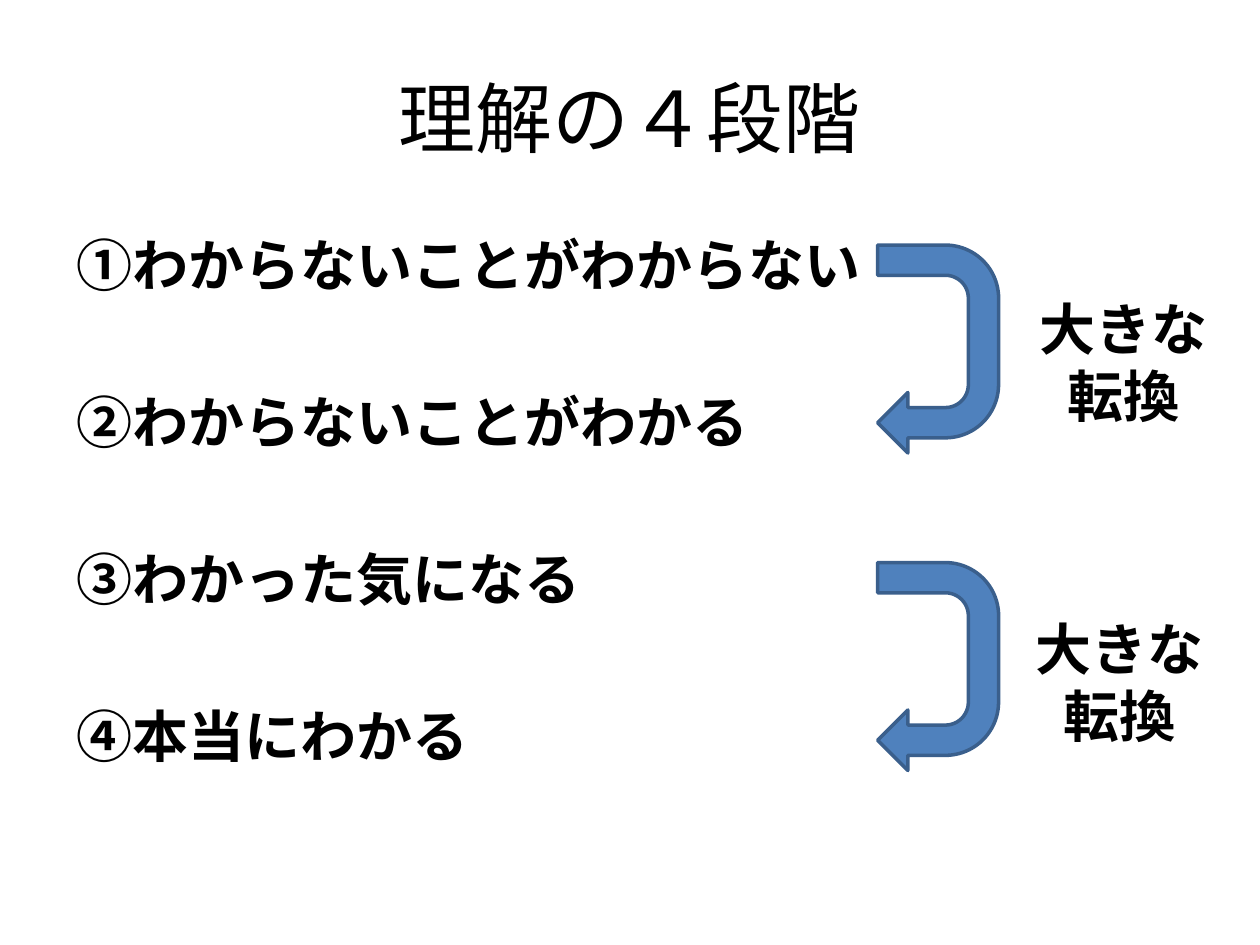
from pptx import Presentation
from pptx.dml.color import RGBColor
from pptx.enum.shapes import MSO_SHAPE
from pptx.enum.text import MSO_ANCHOR, PP_ALIGN
from pptx.util import Inches, Pt

HUES = {"ink": "000000", "fill": "4F81BD", "edge": "3A5F8C"}
STEPS = ["①わからないことがわからない", "②わからないことがわかる",
         "③わかった気になる", "④本当にわかる"]
TURNS = [(22.9, 81.4, 22.9), (48.1, 81.1, 48.3)]


class Deck:
    """Draws styled parts on a slide grid of 100 columns by 75 rows."""

    def __init__(self):
        self.show = Presentation()
        self.show.slide_width, self.show.slide_height = Inches(10), Inches(7.5)
        self.slide = self.show.slides.add_slide(self.show.slide_layouts[6])
        self.face = "Karla"

    def grid(self, *cells):
        return [Inches(cell / 10) for cell in cells]

    def hue(self, name):
        return RGBColor.from_string(HUES[name])

    def text(self, lines, box, size=32, bold=True, align=PP_ALIGN.CENTER,
             anchor=MSO_ANCHOR.TOP, gap=0, wrap=True):
        frame = self.slide.shapes.add_textbox(*self.grid(*box)).text_frame
        frame.word_wrap = wrap
        frame.vertical_anchor = anchor
        frame.text = "\n".join(lines)
        for rank, para in enumerate(frame.paragraphs):
            para.alignment = align
            para.space_before = Pt(gap if rank else 0)
            font = para.font
            font.name, font.size, font.bold = self.face, Pt(size), bold
            font.color.rgb = self.hue("ink")

    def turn(self, box):
        shape = self.slide.shapes.add_shape(MSO_SHAPE.U_TURN_ARROW, *self.grid(*box))
        shape.rotation = 90
        shape.shadow.inherit = False
        for spot, value in enumerate([0.25, 0.25, 0.25, 0.44, 1]):
            shape.adjustments[spot] = value
        shape.fill.solid()
        shape.fill.fore_color.rgb = self.hue("fill")
        shape.line.color.rgb = self.hue("edge")
        shape.line.width = Pt(2)


def main():
    deck = Deck()
    deck.text(["理解の４段階"], (5, 3, 90, 12.5), size=44, bold=False,
              anchor=MSO_ANCHOR.MIDDLE)
    deck.text(STEPS, (5.1, 17.8, 90, 48.8), align=PP_ALIGN.LEFT, gap=51.3)
    for top, left, row in TURNS:
        deck.turn((66.2, top, 16.5, 9.6))
        deck.text(["大きな", "転換"], (left, row, 15.5, 11.8), wrap=False)
    deck.show.save("out.pptx")


if __name__ == "__main__":
    main()
